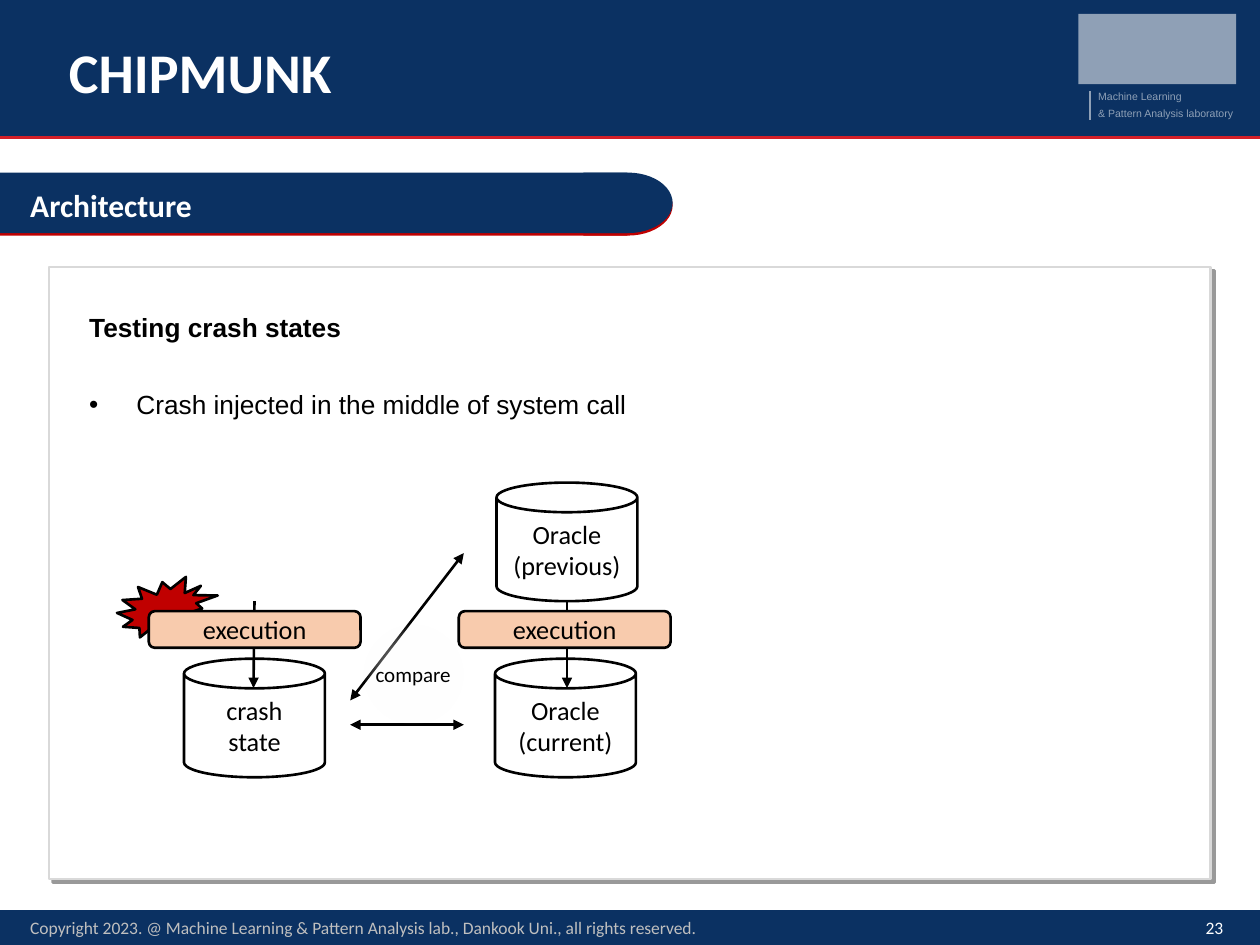
from lxml import etree
from pptx import Presentation
from pptx.dml.color import RGBColor
from pptx.enum.shapes import MSO_CONNECTOR, MSO_SHAPE
from pptx.enum.text import MSO_ANCHOR, PP_ALIGN
from pptx.oxml import parse_xml
from pptx.oxml.ns import nsdecls, qn
from pptx.util import Cm, Pt

C = dict(navy="0B3162", red="D41F28", dark_red="C00000", white="FFFFFF",
         black="000000", grey="BFBFBF", border="D9D9D9", peach="F8CBAD")

# Content: text, box in cm, font format, paragraph and frame options
LOGO_TEXT = [
    ("Machine Learning", (21.89, 1.68, 2.24, 0.51)),
    ("& Pattern Analysis laboratory", (21.89, 2.03, 3.28, 0.51)),
]
TITLE = ("CHIPMUNK", (1.14, 0.38, 20.62, 1.88))
FOOTER = ("Copyright 2023. @ Machine Learning & Pattern Analysis lab., "
          "Dankook Uni., all rights reserved.", (0.36, 18.19, 14.02, 1.02))
NUMBER = ("23", (23.16, 18.36, 1.75, 0.69))
SECTION = ("Architecture", (0.36, 3.63, 12.29, 1.02))
HEADING = ("Testing crash states", (1.55, 5.84, 17.75, 1.09))
BULLET = ("Crash injected in the middle of system call", (1.55, 7.39, 22.3, 1.09))

CAN_SIZE = (2.84, 2.39)
CANS = [("crash\nstate", 3.71, 13.28), ("Oracle\n(previous)", 10.01, 9.73),
        ("Oracle\n(current)", 9.98, 13.28)]
FLOWS = [((11.43, 12.12), (11.43, 13.87)), ((5.13, 12.12), (5.11, 13.87))]
EXECUTION_X = (9.25, 3.0)
COMPARISONS = [((7.06, 14.12), (9.35, 11.15)), ((7.06, 14.61), (9.35, 14.61))]

prs = Presentation()
prs.slide_width, prs.slide_height = Cm(25.4), Cm(19.05)
s = prs.slides.add_slide(prs.slide_layouts[6])


def write(sp, text, fmt, align=PP_ALIGN.LEFT, anchor=MSO_ANCHOR.TOP,
          spacing=None, wrap=True, bullet=False):
    tf = sp.text_frame
    tf.word_wrap, tf.vertical_anchor = wrap, anchor
    for i, line in enumerate(text.split("\n")):
        p = tf.paragraphs[0] if i == 0 else tf.add_paragraph()
        p.alignment = align
        if spacing:
            p.line_spacing = spacing
        if bullet:
            pPr = p._p.get_or_add_pPr()
            pPr.set("marL", str(Cm(0.95)))
            pPr.set("indent", str(-Cm(0.95)))
            etree.SubElement(pPr, qn("a:buFont")).set("typeface", "Arial")
            etree.SubElement(pPr, qn("a:buChar")).set("char", "•")
        r = p.add_run()
        r.text = line
        for name, value in fmt.items():
            if name == "color":
                r.font.color.rgb = RGBColor.from_string(C[value])
            else:
                setattr(r.font, name, value)


def text_box(item, fmt, **options):
    text, box = item
    write(s.shapes.add_textbox(*map(Cm, box)), text, fmt, **options)


def shape(kind, box, fill, line=None, width=1.5):
    sp = s.shapes.add_shape(kind, *map(Cm, box))
    sp.shadow.inherit = False
    sp.fill.solid()
    sp.fill.fore_color.rgb = RGBColor.from_string(C[fill])
    if line:
        sp.line.color.rgb = RGBColor.from_string(C[line])
        sp.line.width = Pt(width)
    else:
        sp.line.fill.background()
    return sp


def connect(start, end, color="black", heads=()):
    cn = s.shapes.add_connector(MSO_CONNECTOR.STRAIGHT, *map(Cm, start + end))
    cn.line.color.rgb = RGBColor.from_string(C[color])
    cn.line.width = Pt(1.5)
    for head in heads:
        etree.SubElement(cn.line._get_or_add_ln(), qn(head)).set("type", "triangle")
    etree.SubElement(cn._element.spPr, qn("a:effectLst"))


def font(size, color="black", name="Calibri", bold=False):
    return dict(size=Pt(size), name=name, bold=bold, color=color)


CENTER = dict(align=PP_ALIGN.CENTER, anchor=MSO_ANCHOR.MIDDLE)

# Footer and header bands
shape(MSO_SHAPE.RECTANGLE, (0, 18.36, 25.4, 0.67), "navy", "navy", 1)
shape(MSO_SHAPE.RECTANGLE, (0, 0, 25.4, 2.79), "navy", "navy", 1)
connect((0, 2.77), (25.4, 2.77), "red")

# Laboratory mark, dimmed by a translucent cover
shape(MSO_SHAPE.RECTANGLE, (21.74, 0.28, 3.18, 1.42), "white")
for item in LOGO_TEXT:
    text_box(item, font(6, "white", "Arial"), wrap=False)
connect((21.97, 1.83), (21.97, 2.41), "white")
cover = shape(MSO_SHAPE.RECTANGLE, (21.59, 0.03, 3.66, 2.57), "navy")
cover_color = cover._element.spPr.find(qn("a:solidFill"))[0]
etree.SubElement(cover_color, qn("a:alpha")).set("val", "46000")

# Title and footer text
text_box(TITLE, font(32, "white", bold=True), anchor=MSO_ANCHOR.BOTTOM, spacing=0.9)
text_box(FOOTER, font(10, "grey"), anchor=MSO_ANCHOR.MIDDLE)
text_box(NUMBER, font(10, "white"), align=PP_ALIGN.RIGHT, anchor=MSO_ANCHOR.MIDDLE)

# Section tab: a red layer peeks out under the navy one
for color, top in (("dark_red", 3.53), ("navy", 3.48)):
    shape(MSO_SHAPE.FLOWCHART_DELAY, (11.76, top, 1.8, 1.22), color)
    shape(MSO_SHAPE.RECTANGLE, (0, top, 12.65, 1.22), color)
text_box(SECTION, font(18, "white", bold=True))

# Content panel with a hard shadow
panel = shape(MSO_SHAPE.RECTANGLE, (0.99, 5.38, 23.42, 12.34), "white", "border")
panel._element.spPr.find(qn("a:effectLst")).append(parse_xml(
    f'<a:outerShdw {nsdecls("a")} blurRad="0" dist="{Pt(3)}" dir="2700000" '
    f'algn="tl" rotWithShape="0"><a:srgbClr val="{C["black"]}">'
    '<a:alpha val="40000"/></a:srgbClr></a:outerShdw>'))
text_box(HEADING, font(15, name="Arial", bold=True), spacing=1.5)
text_box(BULLET, font(15, name="Arial"), spacing=1.5, bullet=True)

# Crash diagram
for text, x, y in CANS:
    write(shape(MSO_SHAPE.CAN, (x, y) + CAN_SIZE, "white", "black"),
          text, font(15), **CENTER)
shape(MSO_SHAPE.EXPLOSION2, (2.36, 11.63, 2.03, 1.22), "dark_red", "black")
for start, end in FLOWS:
    connect(start, end, heads=["a:tailEnd"])
for x in EXECUTION_X:
    write(shape(MSO_SHAPE.ROUNDED_RECTANGLE, (x, 12.32, 4.27, 0.74), "peach", "black"),
          "execution", font(15), **CENTER)
for start, end in COMPARISONS:
    connect(start, end, heads=["a:headEnd", "a:tailEnd"])

# Compare label on a white glow that fades outwards
glow = shape(MSO_SHAPE.OVAL, (7.06, 12.32, 2.54, 2.54), "white")
stops = "".join(
    f'<a:gs pos="{pos}000"><a:srgbClr val="{C["white"]}">'
    f'<a:alpha val="{alpha}000"/></a:srgbClr></a:gs>'
    for pos, alpha in ((0, 100), (56, 0), (97, 0)))
solid = glow._element.spPr.find(qn("a:solidFill"))
solid.getparent().replace(solid, parse_xml(
    f'<a:gradFill {nsdecls("a")}><a:gsLst>{stops}</a:gsLst><a:path path="circle">'
    '<a:fillToRect l="50000" t="50000" r="50000" b="50000"/></a:path></a:gradFill>'))
for side in ("left", "top", "right", "bottom"):
    setattr(glow.text_frame, f"margin_{side}", 0)
write(glow, "compare", font(12), **CENTER)

prs.save("out.pptx")
